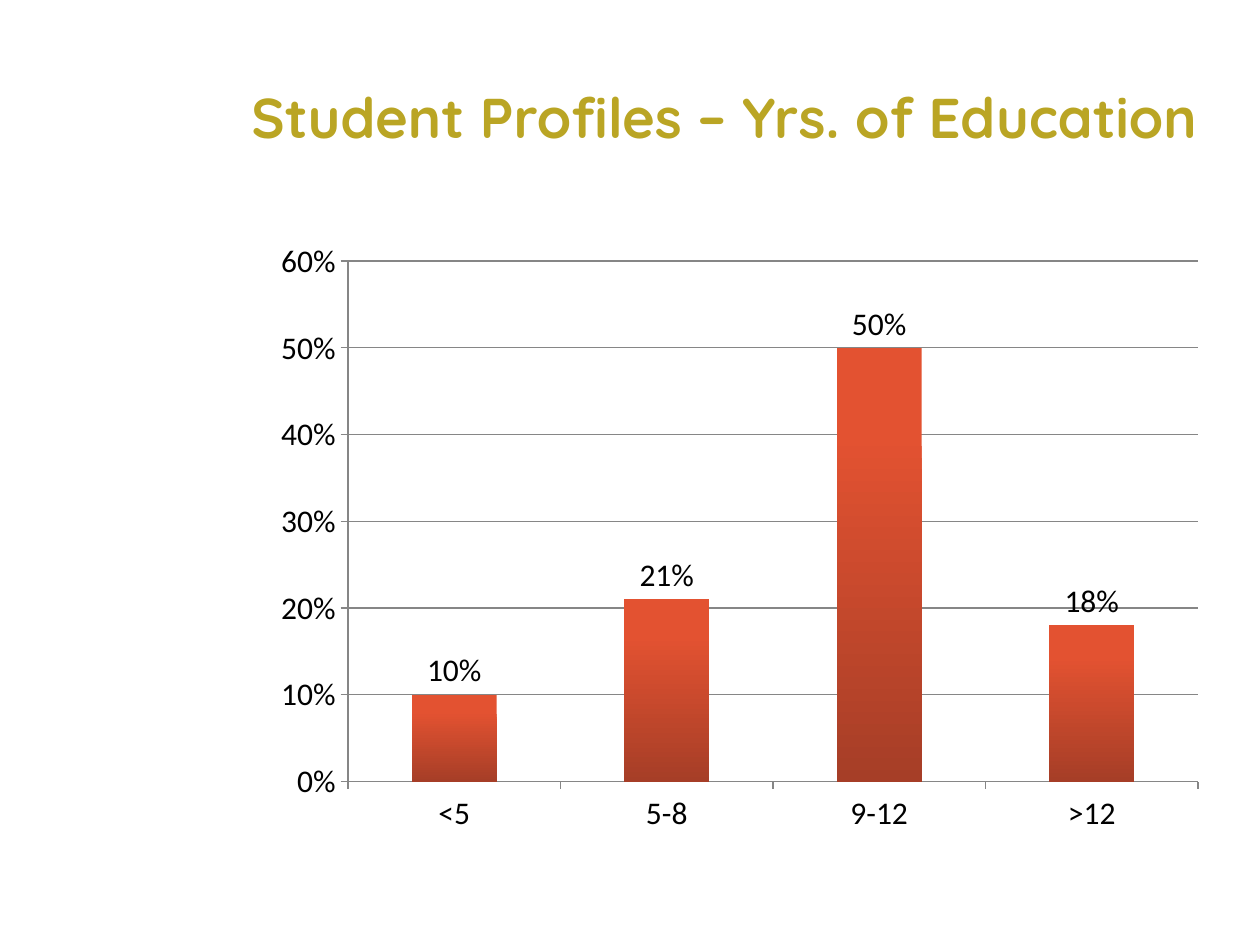
from dataclasses import dataclass

from lxml import etree
from pptx import Presentation
from pptx import util as u
from pptx.chart.data import CategoryChartData
from pptx.dml.color import RGBColor
from pptx.enum import chart as charts, text
from pptx.oxml import parse_xml
from pptx.oxml.ns import nsdecls, qn

BODY_FONT = "Calibri"
GREY = "868686"


@dataclass
class Box:
    left: float
    top: float
    width: float
    height: float

    def lengths(self):
        return [u.Pt(v) for v in (self.left, self.top, self.width, self.height)]


@dataclass
class Bar:
    category: str
    share: float


TITLE_BOX = Box(126, 21.6, 576, 90)
CHART_BOX = Box(149.76, 131.76, 545.76, 349.92)
PLOT = {"x": 0.09, "y": 0.05, "w": 0.89, "h": 0.85}  # fractions of the chart
BARS = [Bar("<5", 0.10), Bar("5-8", 0.21), Bar("9-12", 0.50), Bar(">12", 0.18)]


def color(value: str) -> RGBColor:
    return RGBColor.from_string(value)


def style_font(font, name: str, size: float, value: str, bold: bool = False) -> None:
    font.name, font.size, font.bold = name, u.Pt(size), bold
    font.color.rgb = color(value)


def style_line(line) -> None:
    line.color.rgb = color(GREY)
    line.width = u.Pt(0.75)


def style_axis(axis) -> None:
    axis.major_tick_mark = charts.XL_TICK_MARK.OUTSIDE
    axis.minor_tick_mark = charts.XL_TICK_MARK.NONE
    style_font(axis.tick_labels.font, BODY_FONT, 18, "000000")
    style_line(axis.format.line)


def place_plot(chart) -> None:
    """Fix the inner plot area inside the chart."""
    plot_area = chart._chartSpace.chart.plotArea
    for old in plot_area.findall(qn("c:layout")):
        plot_area.remove(old)
    layout = parse_xml(f"<c:layout {nsdecls('c')}><c:manualLayout/></c:layout>")
    settings = {"layoutTarget": "inner", "xMode": "edge", "yMode": "edge", **PLOT}
    for name, value in settings.items():
        etree.SubElement(layout[0], qn(f"c:{name}")).set("val", str(value))
    plot_area.insert(0, layout)


def add_title(slide, words: str) -> None:
    title = slide.shapes.title
    title.left, title.top, title.width, title.height = TITLE_BOX.lengths()
    frame = title.text_frame
    frame.word_wrap = True
    frame.vertical_anchor = text.MSO_ANCHOR.MIDDLE
    paragraph = frame.paragraphs[0]
    paragraph.alignment = text.PP_ALIGN.CENTER
    run = paragraph.add_run()
    run.text = words
    style_font(run.font, "Quicksand", 32, "BAA524", bold=True)


def add_bar_chart(slide) -> None:
    data = CategoryChartData(number_format="0%")
    data.categories = [bar.category for bar in BARS]
    data.add_series("Series 1", [bar.share for bar in BARS])
    chart = slide.shapes.add_chart(
        charts.XL_CHART_TYPE.COLUMN_CLUSTERED, *CHART_BOX.lengths(), data).chart
    chart.has_title = chart.has_legend = False
    style_font(chart.font, BODY_FONT, 10, "000000")
    place_plot(chart)

    # Axes
    style_axis(chart.category_axis)
    values = chart.value_axis
    style_axis(values)
    values.minimum_scale, values.maximum_scale, values.major_unit = 0, 0.6, 0.1
    values.tick_labels.number_format = "0%"
    values.tick_labels.number_format_is_linked = False
    values.has_major_gridlines = True
    style_line(values.major_gridlines.format.line)

    # Columns, shaded from top to bottom
    plot = chart.plots[0]
    plot.gap_width = 150
    plot.vary_by_categories = False
    fill = plot.series[0].format.fill
    fill.gradient()
    fill.gradient_angle = 270
    for stop, position, shade in zip(fill.gradient_stops, (0.2, 1), ("E35231", "A63E27")):
        stop.position = position
        stop.color.rgb = color(shade)

    # Value labels
    labels = plot.series[0].data_labels
    labels.show_value = True
    labels.number_format = "0%"
    labels.number_format_is_linked = False
    labels.position = charts.XL_LABEL_POSITION.OUTSIDE_END
    style_font(labels.font, BODY_FONT, 18, "000000")


def main() -> None:
    presentation = Presentation()
    presentation.slide_width, presentation.slide_height = u.Pt(720), u.Pt(540)
    slide = presentation.slides.add_slide(presentation.slide_layouts[5])
    add_title(slide, "Student Profiles – Yrs. of Education")
    add_bar_chart(slide)
    presentation.save("out.pptx")


if __name__ == "__main__":
    main()
